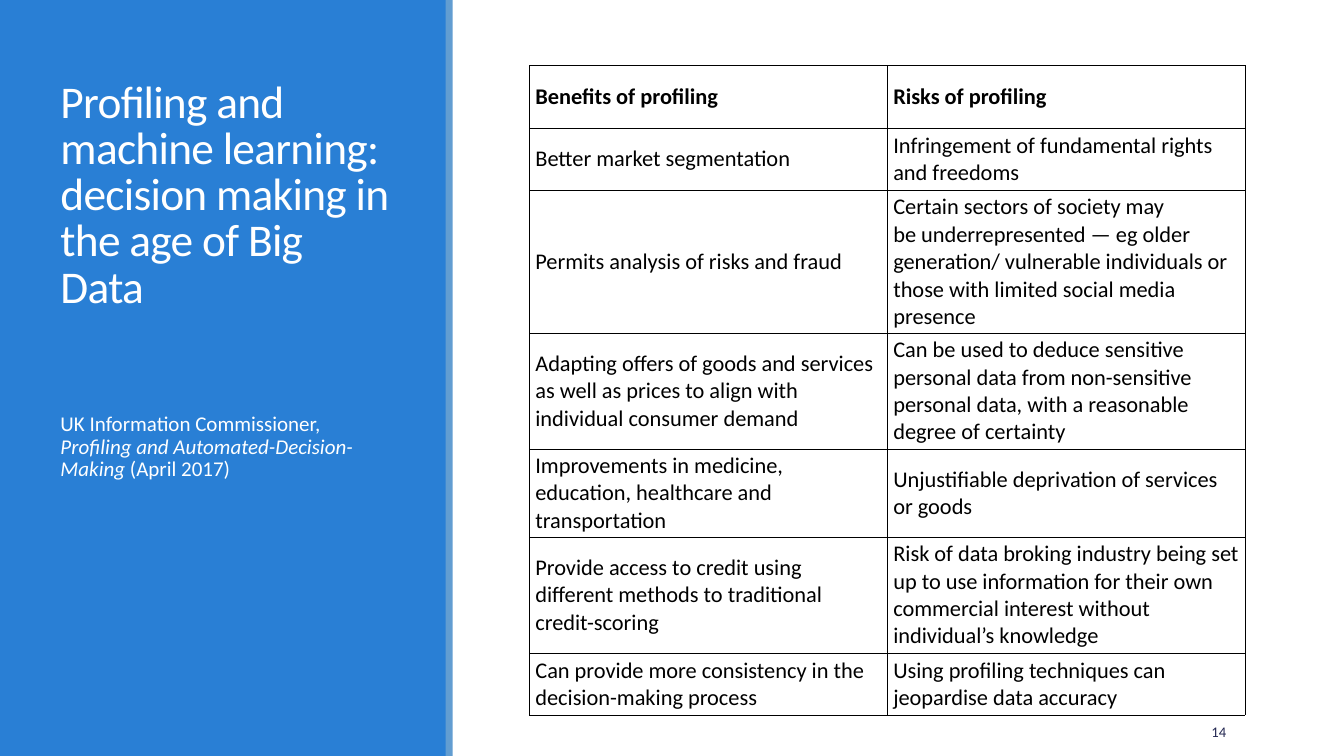
from copy import deepcopy

from lxml.etree import SubElement
from pptx import Presentation
from pptx.dml.color import RGBColor
from pptx.enum.shapes import MSO_SHAPE
from pptx.enum.text import MSO_ANCHOR, MSO_AUTO_SIZE, PP_ALIGN
from pptx.oxml.ns import qn
from pptx.util import Inches, Pt

BLUE = RGBColor(0x29, 0x7F, 0xD5)
EDGE_BLUE = RGBColor(0x62, 0x9D, 0xD1)
NAVY = RGBColor(0x24, 0x28, 0x52)
WHITE = RGBColor(0xFF, 0xFF, 0xFF)
BLACK = RGBColor(0, 0, 0)

FONT = "Calibri"
TITLE = "Profiling and machine learning: decision making in the age of Big Data"
SOURCE = [
    ("UK Information Commissioner, ", False),
    ("Profiling and Automated-Decision-Making ", True),
    ("(April 2017)", False),
]
ROWS = [
    (0.62, "Benefits of profiling", "Risks of profiling"),
    (0.62, "Better market segmentation",
     "Infringement of fundamental rights and freedoms"),
    (1.4, "Permits analysis of risks and fraud",
     "Certain sectors of society may\vbe underrepresented — eg older generation/ "
     "vulnerable individuals or those with limited social media presence"),
    (1.01, "Adapting offers of goods and services as well as prices to align with "
     "individual consumer demand",
     "Can be used to deduce sensitive personal data from non-sensitive personal data, "
     "with a reasonable degree of certainty"),
    (0.62, "Improvements in medicine, education, healthcare and transportation",
     "Unjustifiable deprivation of services or goods"),
    (1.01, "Provide access to credit using different methods to traditional credit-scoring",
     "Risk of data broking industry being set up to use information for their own "
     "commercial interest without individual’s knowledge"),
    (0.62, "Can provide more consistency in the decision-making process",
     "Using profiling techniques can jeopardise data accuracy"),
]


def set_all(target, values):
    for name, value in values.items():
        setattr(target, name, value)


def place(shape, left, top, width, height):
    set_all(shape, {"left": Inches(left), "top": Inches(top),
                    "width": Inches(width), "height": Inches(height)})


def style_span(span, size, color, **extra):
    set_all(span.font, {"name": FONT, "size": Pt(size), **extra})
    span.font.color.rgb = color


def add_band(page, depth, color, left, top, width, height):
    band = page.shapes.add_shape(MSO_SHAPE.RECTANGLE, Inches(left), Inches(top),
                                 Inches(width), Inches(height))
    band.shadow.inherit = False
    band.fill.solid()
    band.fill.fore_color.rgb = color
    band.line.fill.background()
    page.shapes._spTree.insert(2 + depth, band._element)


def fill_side_panel(page, left, top, width, height):
    add_band(page, 0, BLUE, left, top, width, height)
    add_band(page, 1, EDGE_BLUE, left + width - 0.01, top, 0.07, height)

    title = page.shapes.title
    place(title, left + 0.5, top + 0.65, 3.5, 2.5)
    set_all(title.text_frame, {"word_wrap": True, "auto_size": MSO_AUTO_SIZE.NONE,
                               "vertical_anchor": MSO_ANCHOR.BOTTOM})
    para = title.text_frame.paragraphs[0]
    set_all(para, {"alignment": PP_ALIGN.LEFT, "line_spacing": 0.85})
    span = para.add_run()
    span.text = TITLE
    style_span(span, 32.4, WHITE, bold=False)
    span._r.get_or_add_rPr().set("spc", "-50")

    body = page.placeholders[2]
    place(body, left + 0.5, top + 3.2, 3.5, 3.7)
    set_all(body.text_frame, {"word_wrap": True, "auto_size": MSO_AUTO_SIZE.NONE,
                              "vertical_anchor": MSO_ANCHOR.TOP,
                              "margin_top": Inches(0.9)})
    para = body.text_frame.paragraphs[0]
    set_all(para, {"line_spacing": 0.9, "space_before": Pt(0), "space_after": Pt(2)})
    for text, italic in SOURCE:
        span = para.add_run()
        span.text = text
        style_span(span, 15, WHITE, italic=italic)


def add_borders(cell):
    properties = cell._tc.get_or_add_tcPr()
    for index, side in enumerate(("lnL", "lnR", "lnT", "lnB")):
        line = SubElement(properties, qn(f"a:{side}"), w=str(Pt(0.25)))
        properties.insert(index, line)
        fill = SubElement(line, qn("a:solidFill"))
        SubElement(fill, qn("a:srgbClr"), val=str(BLACK))


def fill_cell(cell, text, bold):
    set_all(cell, {"vertical_anchor": MSO_ANCHOR.MIDDLE,
                   "margin_left": Inches(0.06), "margin_right": Inches(0.06),
                   "margin_top": Inches(0.03), "margin_bottom": Inches(0.03)})
    cell.fill.background()
    add_borders(cell)
    para = cell.text_frame.paragraphs[0]
    para.text = text
    for span in para.runs:
        style_span(span, 16, BLACK, bold=bold)
    for line_break in para._p.findall(qn("a:br")):
        line_break.append(deepcopy(para.runs[0]._r.rPr))


def add_profiling_table(page, left, top, width, height):
    table = page.shapes.add_table(len(ROWS), 2, Inches(left), Inches(top),
                                  Inches(width), Inches(height)).table
    set_all(table, {"first_row": False, "horz_banding": False})
    for column in table.columns:
        column.width = Inches(width / 2)
    for row_index, (row_height, *texts) in enumerate(ROWS):
        table.rows[row_index].height = Inches(row_height)
        for column_index, text in enumerate(texts):
            fill_cell(table.cell(row_index, column_index), text, row_index == 0)


def add_page_number(page, left, top, width, height):
    box = page.shapes.add_textbox(Inches(left), Inches(top), Inches(width), Inches(height))
    set_all(box.text_frame, {"word_wrap": True, "vertical_anchor": MSO_ANCHOR.MIDDLE})
    para = box.text_frame.paragraphs[0]
    para.alignment = PP_ALIGN.RIGHT
    span = para.add_run()
    span.text = "14"
    style_span(span, 10.5, NAVY)


def main():
    deck = Presentation()
    set_all(deck, {"slide_width": Inches(13.33), "slide_height": Inches(7.5)})
    page = deck.slides.add_slide(deck.slide_layouts.get_by_name("Content with Caption"))
    content = page.placeholders[1]._element
    content.getparent().remove(content)
    fill_side_panel(page, 0, 0, 4.43, 7.5)
    add_profiling_table(page, 5.25, 0.65, 7.1, 5.9)
    add_page_number(page, 10.83, 7.06, 1.43, 0.4)
    deck.save("out.pptx")


if __name__ == "__main__":
    main()
